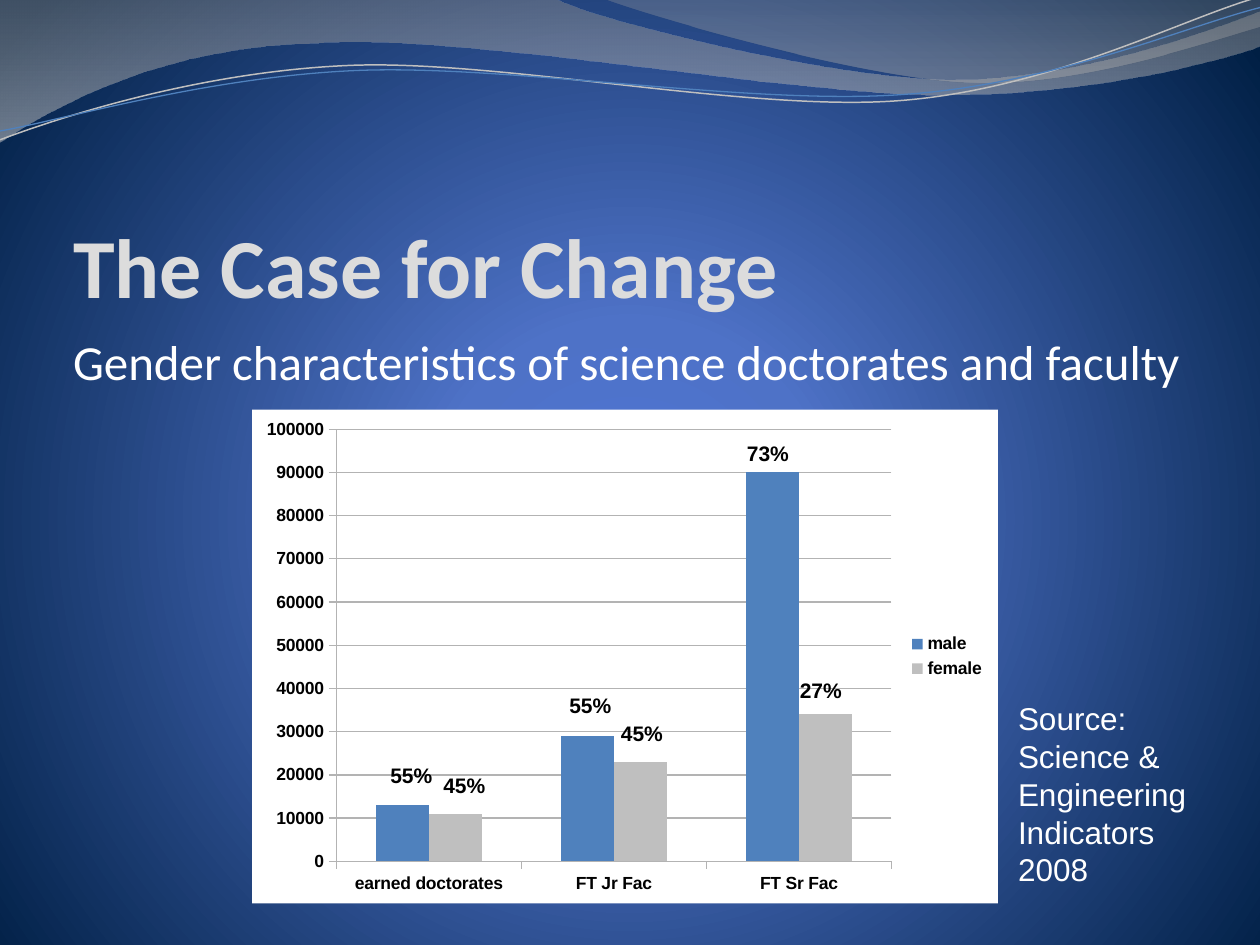
from dataclasses import dataclass
from typing import NamedTuple, Optional

from lxml.etree import SubElement
from pptx import Presentation
from pptx.chart.data import CategoryChartData
from pptx.dml.color import RGBColor as RGB
from pptx.enum.chart import XL_CHART_TYPE as ChartType
from pptx.enum.chart import XL_LEGEND_POSITION as LegendPos
from pptx.enum.chart import XL_TICK_MARK as Tick
from pptx.enum.text import MSO_ANCHOR as Anchor
from pptx.enum.text import PP_ALIGN as Align
from pptx.oxml import parse_xml
from pptx.oxml.ns import nsdecls, qn
from pptx.util import Inches, Pt


@dataclass(frozen=True)
class Theme:
    title: str = "DCDCDC"
    white: str = "FFFFFF"
    black: str = "000000"
    blue: str = "4F81BD"
    silver: str = "BFBFBF"
    grid: str = "B3B3B3"
    heading_font: str = "Calibri"
    body_font: str = "Arial"
    title_size: float = 48
    subtitle_size: float = 28
    source_size: float = 18
    label_size: float = 12
    chart_size: float = 10


class Stop(NamedTuple):
    pos: int
    color: str
    alpha: int = 100


class Wave(NamedTuple):
    """A segment of one point is a line, one of three points a cubic curve."""
    start: tuple
    segments: list
    stops: tuple = ()
    line: Optional[str] = None
    width: float = 0


class Label(NamedTuple):
    text: str
    left: float
    top: float


T = Theme()

WAVES = [
    Wave((0, 0), [
        [(4.4, -0.01)],
        [(4.76, 0.17), (6.64, 0.63), (7.58, 0.63)],
        [(8.53, 0.63), (9.58, 0.26), (10, 0.09)],
        [(10.01, 0.36)],
        [(9.83, 0.44), (8.7, 0.76), (7.46, 0.75)],
        [(6.22, 0.75), (3.82, 0.28), (2.57, 0.34)],
        [(1.29, 0.36), (0.46, 0.83), (-0.01, 1.13)],
        [(0, 0)],
    ], (Stop(0, "8D8D8D", 45), Stop(100, "C4C4C4", 55))),
    Wave((4.79, -0.01), [
        [(5.09, 0.11), (6.82, 0.62), (7.69, 0.65)],
        [(8.56, 0.69), (9.61, 0.32), (10, 0.21)],
        [(10, 0)],
        [(4.79, -0.01)],
    ], (Stop(0, "A0A0A0", 30), Stop(80, "A9A9A9", 45))),
    Wave((0, 1.11), [
        [(0.48, 0.93), (1.58, 0.57), (2.77, 0.52)],
        [(3.95, 0.47), (5.93, 0.89), (7.13, 0.8)],
        [(8.33, 0.71), (9.38, 0.15), (9.98, -0.02)],
    ], line=T.silver, width=0.85),
    Wave((0, 1.04), [
        [(0.47, 0.96), (1.64, 0.61), (2.83, 0.56)],
        [(4.03, 0.51), (5.97, 0.84), (7.17, 0.75)],
        [(8.36, 0.67), (9.41, 0.21), (10, 0.06)],
    ], line=T.blue, width=0.75),
]

LABELS = [
    Label("55%", 3, 6), Label("55%", 4.42, 5.45), Label("45%", 3.42, 6.08),
    Label("45%", 4.83, 5.67), Label("27%", 6.25, 5.33), Label("73%", 5.83, 3.45),
]


def gradient(stops: tuple, direction: str):
    gs = "".join(
        f'<a:gs pos="{s.pos * 1000}"><a:srgbClr val="{s.color}">'
        f'<a:alpha val="{s.alpha * 1000}"/></a:srgbClr></a:gs>' for s in stops)
    return parse_xml(f'<a:gradFill {nsdecls("a")} rotWithShape="1">'
                     f'<a:gsLst>{gs}</a:gsLst>{direction}</a:gradFill>')


def set_background(slide) -> None:
    slide.background.fill.solid()
    bg_pr = slide.element.find(".//" + qn("p:bgPr"))
    glow = (Stop(0, "4D75D6"), Stop(25, "4E72C7"), Stop(100, "001F44"))
    bg_pr.replace(bg_pr[0], gradient(
        glow, '<a:path path="circle"><a:fillToRect l="10000" t="110000" '
              'r="10000" b="100000"/></a:path>'))


def bend(sp, segments: list) -> None:
    """Merge the three lines of each curve segment into one cubic Bezier."""
    lines = iter(sp.element.findall(".//" + qn("a:lnTo")))
    for segment in segments:
        parts = [next(lines) for _ in segment]
        if len(parts) == 3:
            curve = parse_xml(f'<a:cubicBezTo {nsdecls("a")}/>')
            parts[0].addprevious(curve)
            for part in parts:
                curve.append(part[0])
                part.getparent().remove(part)


def draw_wave(slide, wave: Wave) -> None:
    points = [(Inches(x), Inches(y)) for seg in wave.segments for x, y in seg]
    builder = slide.shapes.build_freeform(*map(Inches, wave.start), scale=1.0)
    builder.add_line_segments(points, close=False)
    sp = builder.convert_to_shape()
    bend(sp, wave.segments)
    sp.shadow.inherit = False
    if wave.stops:
        SubElement(sp.element.find(".//" + qn("a:path")), qn("a:close"))
        sp.line.fill.background()
        sp.fill.solid()
        solid = sp.element.spPr.find(qn("a:solidFill"))
        sp.element.spPr.replace(solid, gradient(wave.stops, '<a:lin ang="5400000"/>'))
    else:
        sp.fill.background()
        sp.line.color.rgb = RGB.from_string(wave.line)
        sp.line.width = Pt(wave.width)


def style_font(font, name: str, size: float, color: str, bold: bool = False) -> None:
    font.name, font.size, font.bold = name, Pt(size), bold
    font.color.rgb = RGB.from_string(color)


def place(sp, left: float, top: float, width: float, height: float) -> None:
    sp.left, sp.top, sp.width, sp.height = map(Inches, (left, top, width, height))


def write(sp, text: str, font: tuple, margins: tuple = (0, 0.05, 0.02, 0.05),
          anchor=Anchor.TOP, wrap: bool = True) -> None:
    tf = sp.text_frame
    tf.word_wrap, tf.vertical_anchor = wrap, anchor
    tf.margin_left, tf.margin_top, tf.margin_right, tf.margin_bottom = map(Inches, margins)
    p = tf.paragraphs[0]
    p.text, p.alignment = text, Align.LEFT
    style_font(p.font, *font)


def style_axis(axis) -> None:
    style_font(axis.tick_labels.font, T.body_font, T.chart_size, T.black, True)
    axis.major_tick_mark = Tick.OUTSIDE
    axis.format.line.color.rgb = RGB.from_string(T.grid)


def add_faculty_chart(slide) -> None:
    data = CategoryChartData()
    data.categories = ["earned doctorates", "FT Jr Fac", "FT Sr Fac"]
    data.add_series("male", [13000, 29000, 90000])
    data.add_series("female", [11000, 23000, 34000])
    box = map(Inches, (2, 3.25, 5.92, 3.92))
    chart = slide.shapes.add_chart(ChartType.COLUMN_CLUSTERED, *box, data).chart
    chart.has_title = False
    style_font(chart.font, T.body_font, T.chart_size, T.black, True)
    chart.has_legend = True
    chart.legend.position = LegendPos.RIGHT
    chart.legend.include_in_layout = False
    style_font(chart.legend.font, T.body_font, T.chart_size, T.black, True)

    plot = chart.plots[0]
    plot.vary_by_categories, plot.gap_width, plot.overlap = False, 150, 0
    for series, color in zip(plot.series, (T.blue, T.silver)):
        series.format.fill.solid()
        series.format.fill.fore_color.rgb = RGB.from_string(color)

    style_axis(chart.category_axis)
    values = chart.value_axis
    style_axis(values)
    values.minimum_scale, values.maximum_scale, values.major_unit = 0, 100000, 10000
    values.has_major_gridlines = True
    values.major_gridlines.format.line.color.rgb = RGB.from_string(T.grid)

    space = chart.element
    space.find(qn("c:chart")).addnext(parse_xml(
        f'<c:spPr {nsdecls("c", "a")}><a:solidFill><a:srgbClr val="{T.white}"/>'
        '</a:solidFill><a:ln><a:noFill/></a:ln></c:spPr>'))


def main() -> None:
    prs = Presentation()
    prs.slide_width, prs.slide_height = Inches(10), Inches(7.5)
    slide = prs.slides.add_slide(prs.slide_layouts[0])
    title, subtitle = slide.placeholders
    set_background(slide)
    for wave in WAVES:
        draw_wave(slide, wave)
    add_faculty_chart(slide)

    tree = title.element.getparent()
    tree.append(subtitle.element)
    place(subtitle, 0.58, 2.58, 9, 3.5)
    write(subtitle, "Gender characteristics of science doctorates and faculty",
          (T.heading_font, T.subtitle_size, T.white))
    source = slide.shapes.add_textbox(*map(Inches, (8.08, 5.5, 1.46, 1.67)))
    write(source, "Source: Science & Engineering Indicators 2008",
          (T.body_font, T.source_size, T.white))
    for label in LABELS:
        sp = slide.shapes.add_textbox(*map(Inches, (label.left, label.top, 0.54, 0.3)))
        write(sp, label.text, (T.body_font, T.label_size, T.black, True),
              (0.1, 0.05, 0.1, 0.05), wrap=False)
    tree.append(title.element)
    place(title, 0.58, 0.5, 8.59, 2)
    write(title, "The Case for Change", (T.heading_font, T.title_size, T.title, True),
          (0, 0, 0.02, 0), Anchor.BOTTOM)
    prs.save("out.pptx")


if __name__ == "__main__":
    main()
